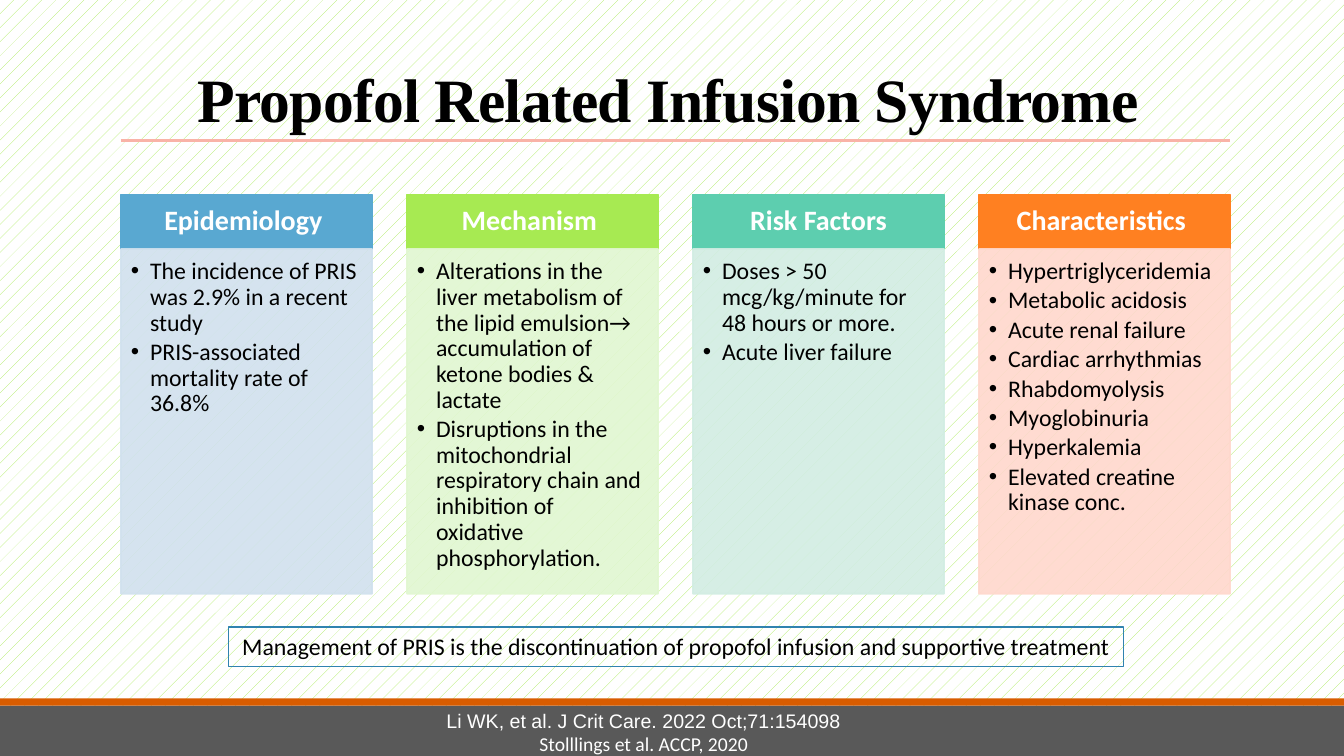
from lxml.etree import SubElement
from pptx import Presentation
from pptx.dml.color import RGBColor
from pptx.enum.dml import MSO_PATTERN
from pptx.enum.shapes import MSO_CONNECTOR, MSO_SHAPE
from pptx.enum.text import MSO_ANCHOR as ANCHOR, MSO_AUTO_SIZE, PP_ALIGN as ALIGN
from pptx.oxml.ns import qn
from pptx.util import Inches, Pt

COLORS = {
    "black": "000000", "white": "FFFFFF", "pattern": "A7EA52", "rule": "F9B3A7",
    "footer": "595959", "footer_edge": "D85C00", "outline": "3083AF",
}
TOPICS = [
    ("Epidemiology ", "59A8D1", "D1E1EE", [
        "The incidence of PRIS was 2.9% in a recent study",
        "PRIS-associated mortality rate of 36.8%"]),
    ("Mechanism ", "A7EA52", "E1F7D1", [
        "Alterations in the liver metabolism of the lipid emulsion→ "
        "accumulation of ketone bodies & lactate",
        "Disruptions in the mitochondrial respiratory chain and inhibition of "
        "oxidative phosphorylation."]),
    ("Risk Factors", "5DCEAF", "D2EDE3", [
        "Doses > 50 mcg/kg/minute for 48 hours or more.",
        "Acute liver failure"]),
    ("Characteristics ", "FF8021", "FFD8CD", [
        "Hypertriglyceridemia", "Metabolic acidosis", "Acute renal failure",
        "Cardiac arrhythmias", "Rhabdomyolysis", "Myoglobinuria", "Hyperkalemia",
        "Elevated creatine kinase conc."]),
]
LEFT, CONTENT_WIDTH, CARD_WIDTH = 1.2, 11, 2.49
CARD_STEP = (CONTENT_WIDTH - CARD_WIDTH) / (len(TOPICS) - 1)
HEADER_TOP, HEADER_HEIGHT, BODY_HEIGHT = 1.93, 0.54, 3.42


def rgb(value):
    return RGBColor.from_string(value)


def write_text(frame, lines, size=17, fonts=("Calibri",), color="black", bold=False,
               align=ALIGN.CENTER, anchor=ANCHOR.TOP, insets=(0.1, 0.05, 0.1, 0.05),
               line_spacing=None, space_after=None, bulleted=False, tracking=None):
    """Fill a text frame, one paragraph per line; fonts cycle over the lines."""
    frame.word_wrap = True
    frame.auto_size = MSO_AUTO_SIZE.NONE
    frame.vertical_anchor = anchor
    (frame.margin_left, frame.margin_top,
     frame.margin_right, frame.margin_bottom) = map(Inches, insets)
    for index, line in enumerate(lines):
        paragraph = frame.add_paragraph() if index else frame.paragraphs[0]
        paragraph.alignment = align
        if line_spacing:
            paragraph.line_spacing = line_spacing
        if space_after:
            paragraph.space_after = Pt(space_after)
        if bulleted:
            properties = paragraph._p.get_or_add_pPr()
            properties.set("marL", str(Inches(0.19)))
            properties.set("indent", str(Inches(-0.19)))
            SubElement(properties, qn("a:buFont"), typeface="Arial")
            SubElement(properties, qn("a:buChar"), char="•")
        run = paragraph.add_run()
        run.text = line
        run.font.size, run.font.bold = Pt(size), bold
        run.font.name = fonts[index % len(fonts)]
        run.font.color.rgb = rgb(COLORS[color])
        if tracking:
            run.font._element.set("spc", str(tracking))


def add_box(slide, left, top, width, height, fill=None, line=None,
            line_width=1.25, opacity=None):
    box = slide.shapes.add_shape(MSO_SHAPE.RECTANGLE, Inches(left), Inches(top),
                                 Inches(width), Inches(height))
    box.shadow.inherit = False
    if fill:
        box.fill.solid()
        box.fill.fore_color.rgb = rgb(fill)
    else:
        box.fill.background()
    if line:
        box.line.color.rgb = rgb(line)
        box.line.width = Pt(line_width)
    else:
        box.line.fill.background()
    if opacity:
        for color in box._element.spPr.iter(qn("a:srgbClr")):
            SubElement(color, qn("a:alpha"), val=str(opacity * 1000))
    return box


def add_rule(slide, left, top, width):
    rule = slide.shapes.add_connector(MSO_CONNECTOR.STRAIGHT, Inches(left), Inches(top),
                                      Inches(left + width), Inches(top))
    rule.line.color.rgb = rgb(COLORS["rule"])
    rule.line.width = Pt(2.25)
    SubElement(rule._element.spPr, qn("a:effectLst"))


def add_title(slide, text):
    title = slide.shapes.title
    title.left, title.top = Inches(LEFT), Inches(0.31)
    title.width, title.height = Inches(CONTENT_WIDTH), Inches(1.08)
    write_text(title.text_frame, [text], size=44, fonts=("Times New Roman",), bold=True,
               anchor=ANCHOR.BOTTOM, line_spacing=0.85, tracking=-50)


def add_topic(slide, left, heading, strong, pale, points):
    header = add_box(slide, left, HEADER_TOP, CARD_WIDTH, HEADER_HEIGHT, strong, strong)
    write_text(header.text_frame, [heading], size=20, color="white", bold=True,
               anchor=ANCHOR.MIDDLE, insets=(0.16, 0.09, 0.16, 0.09), line_spacing=0.9)
    body = add_box(slide, left, HEADER_TOP + HEADER_HEIGHT, CARD_WIDTH, BODY_HEIGHT,
                   pale, pale, opacity=90)
    write_text(body.text_frame, points, align=ALIGN.LEFT, insets=(0.1, 0.1, 0.13, 0.15),
               line_spacing=0.9, space_after=2.6, bulleted=True)


def add_footer(slide, references):
    add_box(slide, 0, 7, 13.33, 0.5, COLORS["footer"])
    add_box(slide, 0, 6.93, 13.33, 0.07, COLORS["footer_edge"])
    citation = slide.shapes.add_textbox(Inches(3.05), Inches(6.98),
                                        Inches(6.67), Inches(0.57))
    write_text(citation.text_frame, references, size=14, fonts=("Arial", "Calibri"),
               color="white")


def main():
    deck = Presentation()
    deck.slide_width, deck.slide_height = Inches(13.33), Inches(7.5)
    slide = deck.slides.add_slide(deck.slide_layouts[5])
    backdrop = slide.background.fill
    backdrop.patterned()
    backdrop.pattern = MSO_PATTERN.PERCENT_5
    backdrop.fore_color.rgb = rgb(COLORS["pattern"])
    backdrop.back_color.rgb = rgb(COLORS["white"])

    add_title(slide, "Propofol Related Infusion Syndrome ")
    add_rule(slide, LEFT, 1.39, CONTENT_WIDTH)
    for column, topic in enumerate(TOPICS):
        add_topic(slide, LEFT + column * CARD_STEP, *topic)
    add_footer(slide, ["Li WK, et al. J Crit Care. 2022 Oct;71:154098",
                       "Stolllings et al. ACCP, 2020"])
    management = add_box(slide, 2.27, 6.22, 8.87, 0.39, line=COLORS["outline"],
                         line_width=0.75)
    write_text(management.text_frame, ["Management of PRIS is the discontinuation of "
                                       "propofol infusion and supportive treatment"])
    deck.save("out.pptx")


if __name__ == "__main__":
    main()
